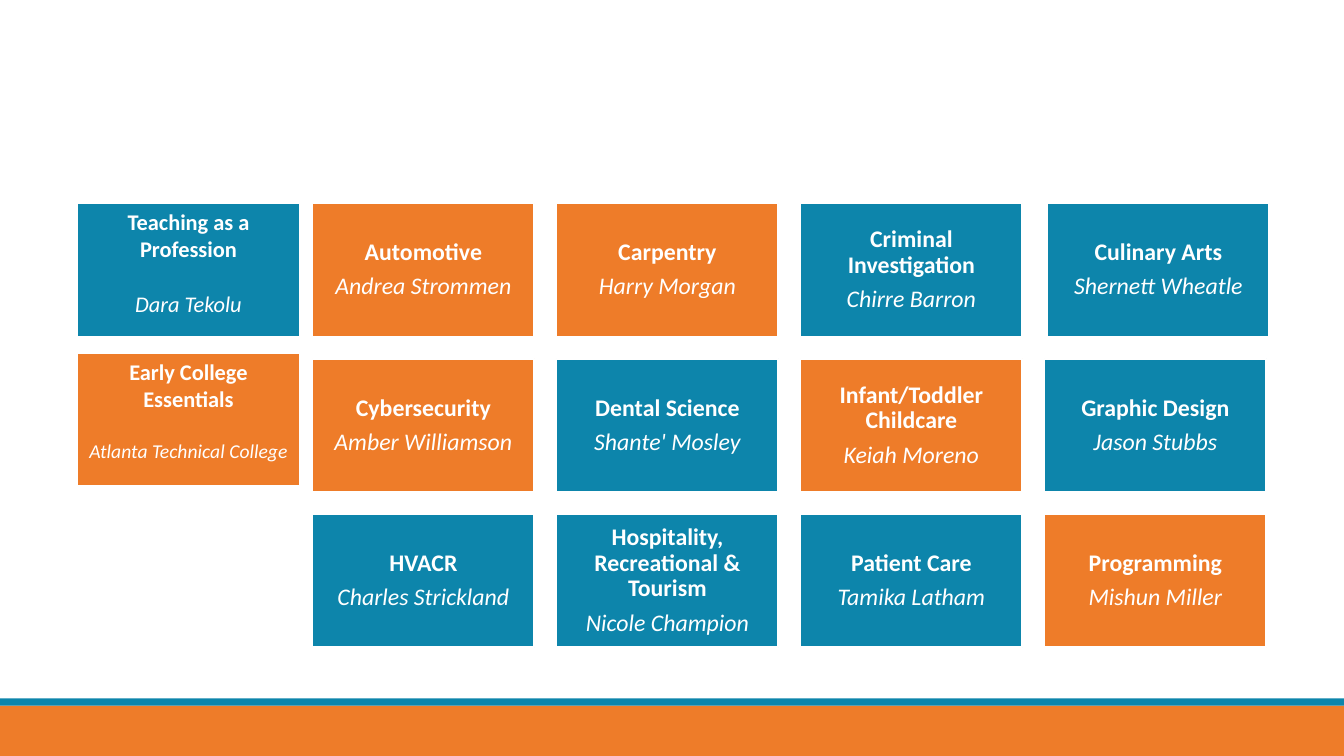
"""Build a slide of programme cards, each with its instructor, above a two-colour footer."""
from pptx import Presentation
from pptx.dml.color import RGBColor
from pptx.enum.shapes import MSO_SHAPE
from pptx.enum.text import MSO_ANCHOR, PP_ALIGN
from pptx.util import Inches, Pt

RECTANGLE = MSO_SHAPE.RECTANGLE
TOP, MIDDLE = MSO_ANCHOR.TOP, MSO_ANCHOR.MIDDLE
CENTER = PP_ALIGN.CENTER

COLORS = {"orange": "EE7C29", "teal": "0D85AB", "white": "FFFFFF"}
FONT = "Calibri"

FOOTER = [("orange", 7, 0.5), ("teal", 6.93, 0.07)]
PROGRAMS = [
    [("Automotive", "Andrea Strommen", "orange"),
     ("Carpentry", "Harry Morgan", "orange"),
     ("Criminal Investigation", "Chirre Barron", "teal"),
     ("Culinary Arts", "Shernett Wheatle", "teal")],
    [("Cybersecurity", "Amber Williamson", "orange"),
     ("Dental Science", "Shante' Mosley", "teal"),
     ("Infant/Toddler Childcare", "Keiah Moreno", "orange"),
     ("Graphic Design", "Jason Stubbs", "teal")],
    [("HVACR", "Charles Strickland", "teal"),
     ("Hospitality, Recreational & Tourism", "Nicole Champion", "teal"),
     ("Patient Care", "Tamika Latham", "teal"),
     ("Programming", "Mishun Miller", "orange")],
]
SIDE_PROGRAMS = [
    ("Teaching as a Profession", "Dara Tekolu", "teal", 2.02, 16),
    ("Early College Essentials", "Atlanta Technical College", "orange", 3.5, 14),
]

SLIDE_WIDTH, SLIDE_HEIGHT = 13.33, 7.5
CARD_WIDTH, CARD_HEIGHT = 2.2, 1.32
SIDE_LEFT = 0.77
GRID_LEFT, GRID_TOP = 3.1, 2.02
COLUMN_STEP, ROW_STEP = 2.42, 1.54
NUDGES = {"Culinary Arts": 0.03}
GRID_STYLE = {"anchor": MIDDLE, "inset": 0.07, "spacing": 0.9, "gap": 6}
SIDE_STYLE = {"anchor": TOP, "inset": 0.1, "spacing": 1.0, "gap": 19.5}


def rgb(name):
    return RGBColor.from_string(COLORS[name])


def add_box(page, left, top, width, height, color):
    box = page.shapes.add_shape(
        RECTANGLE, Inches(left), Inches(top), Inches(width), Inches(height))
    box.shadow.inherit = False
    box.fill.solid()
    box.fill.fore_color.rgb = rgb(color)
    box.line.fill.background()
    return box


def add_card(page, left, top, color, title, person, sizes, style):
    box = add_box(page, left, top, CARD_WIDTH, CARD_HEIGHT, color)
    box.line.color.rgb = rgb("white")
    box.line.width = Pt(1.25)
    frame = box.text_frame
    frame.word_wrap = True
    frame.vertical_anchor = style["anchor"]
    frame.margin_left = frame.margin_right = Inches(style["inset"])
    frame.margin_top = frame.margin_bottom = Inches(min(style["inset"], 0.05)
                                                    if style["anchor"] == TOP else style["inset"])
    title_para, person_para = frame.paragraphs[0], frame.add_paragraph()
    person_para.space_before = Pt(style["gap"])
    for para, text, size in zip((title_para, person_para), (title, person), sizes):
        para.text = text
        para.alignment = CENTER
        para.line_spacing = style["spacing"]
        para.font.name = FONT
        para.font.size = Pt(size)
        para.font.color.rgb = rgb("white")
        para.font.bold = para is title_para
        para.font.italic = para is person_para


def main():
    deck = Presentation()
    deck.slide_width, deck.slide_height = Inches(SLIDE_WIDTH), Inches(SLIDE_HEIGHT)
    page = deck.slides.add_slide(deck.slide_layouts[6])
    for color, top, height in FOOTER:
        add_box(page, 0, top, SLIDE_WIDTH, height, color)
    for row, programs in enumerate(PROGRAMS):
        for column, (title, person, color) in enumerate(programs):
            left = GRID_LEFT + column * COLUMN_STEP + NUDGES.get(title, 0)
            top = GRID_TOP + row * ROW_STEP
            add_card(page, left, top, color, title, person, (17, 17), GRID_STYLE)
    for title, person, color, top, person_size in SIDE_PROGRAMS:
        add_card(page, SIDE_LEFT, top, color, title, person, (16, person_size), SIDE_STYLE)
    deck.save("out.pptx")


if __name__ == "__main__":
    main()
